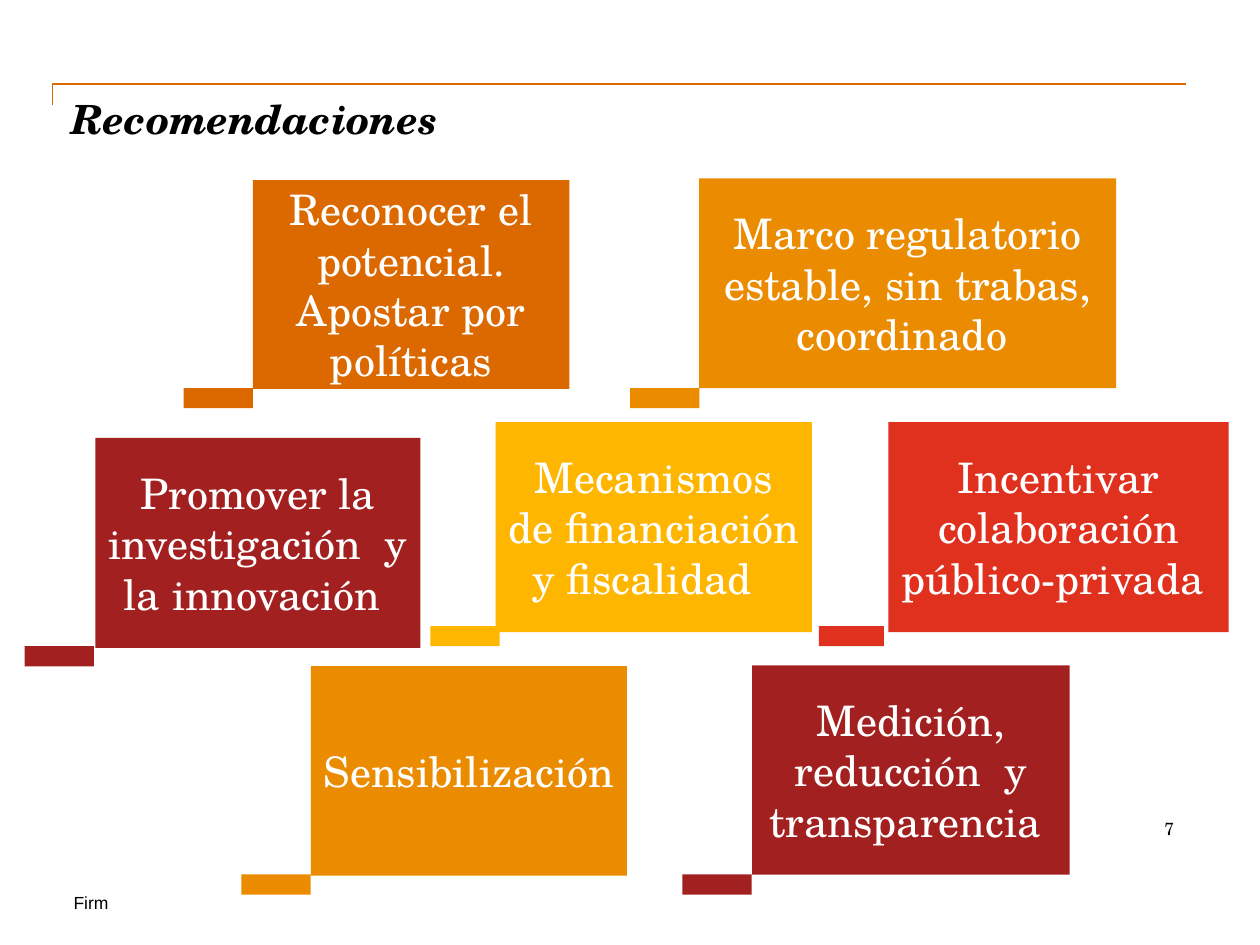
from lxml.etree import SubElement
from pptx import Presentation
from pptx.dml.color import RGBColor
from pptx.enum.shapes import MSO_CONNECTOR, MSO_SHAPE
from pptx.enum.text import MSO_ANCHOR, PP_ALIGN
from pptx.oxml.ns import qn
from pptx.util import Pt

SERIF, SANS = "TeX Gyre Schola", "Arial"
BLACK = RGBColor(0x00, 0x00, 0x00)
WHITE = RGBColor(0xFF, 0xFF, 0xFF)
RUST = RGBColor(0xDC, 0x69, 0x00)
AMBER = RGBColor(0xEB, 0x8C, 0x00)
GOLD = RGBColor(0xFF, 0xB6, 0x00)
RED = RGBColor(0xE0, 0x30, 0x1E)
WINE = RGBColor(0xA3, 0x20, 0x20)

TAB_W, TAB_H = 39.6, 11.5

# Card: text, colour, (left, top, width, height), (tab left, tab top, tab width)
CARDS = [
    ("Promover la investigación  y la innovación ", WINE,
     (54.5, 250.2, 185.7, 120), (14.1, 369.3, TAB_W)),
    ("Medición, reducción  y transparencia ", WINE,
     (429.8, 380.3, 181.4, 119.5), (390, 499.7, TAB_W)),
    ("Marco regulatorio estable, sin trabas, coordinado ", AMBER,
     (399.5, 102, 238.3, 119.8), (360, 221.8, TAB_W)),
    ("Sensibilización ", AMBER,
     (177.7, 380.6, 180.6, 119.8), (138, 499.7, TAB_W)),
    ("Reconocer el potencial. Apostar por políticas", RUST,
     (144.6, 102.9, 180.8, 119.3), (104.9, 221.8, TAB_W)),
    ("Mecanismos de financiación y fiscalidad  ", GOLD,
     (283.2, 241.2, 180.8, 120), (246, 357.8, TAB_W)),
    ("Incentivar colaboración público-privada ", RED,
     (507.7, 241.2, 194.4, 120), (468, 357.8, 37.2)),
]


def place(shape, box):
    for side, size in zip(("left", "top", "width", "height"), box):
        setattr(shape, side, Pt(size))


def write(shape, text, size, color, font=SERIF, align=PP_ALIGN.LEFT, **style):
    para = shape.text_frame.paragraphs[0]
    para.alignment = align
    run = para.add_run()
    run.text = text
    for key, value in {"size": Pt(size), "name": font, **style}.items():
        setattr(run.font, key, value)
    run.font.color.rgb = color


def trim(shape):
    frame = shape.text_frame
    look = {"word_wrap": True, "vertical_anchor": MSO_ANCHOR.TOP,
            "margin_left": 0, "margin_top": 0,
            "margin_right": 0, "margin_bottom": 0}
    for key, value in look.items():
        setattr(frame, key, value)


def block(slide, color, box):
    shape = slide.shapes.add_shape(MSO_SHAPE.RECTANGLE, *map(Pt, box))
    shape.shadow.inherit = False
    shape.fill.solid()
    shape.fill.fore_color.rgb = color
    shape.line.fill.background()
    return shape


def card(slide, text, color, box):
    shape = block(slide, color, box)
    shape.text_frame.word_wrap = True
    shape.text_frame.vertical_anchor = MSO_ANCHOR.MIDDLE
    write(shape, text, 24, WHITE, align=PP_ALIGN.CENTER)


def label(slide, text, box, **style):
    shape = slide.shapes.add_textbox(*map(Pt, box))
    trim(shape)
    write(shape, text, 10, BLACK, **style)


def rule(slide):
    # One-bend connector, turned a quarter so its long arm lies flat
    line = slide.shapes.add_connector(
        MSO_CONNECTOR.ELBOW, Pt(360), Pt(378), Pt(348), Pt(-270))
    line.line.color.rgb = RUST
    line.line.width = Pt(1)
    props = line._element.spPr
    props.find(qn("a:xfrm")).set("rot", "5400000")
    props.find(qn("a:prstGeom")).set("prst", "bentConnector2")
    SubElement(props, qn("a:effectLst"))


def head(slide, text):
    title = slide.shapes.title
    place(title, (41, 54, 678, 40.3))
    trim(title)
    write(title, text, 23, BLACK, bold=True, italic=True)


def main():
    deck = Presentation()
    deck.slide_width, deck.slide_height = Pt(720), Pt(540)
    slide = deck.slides.add_slide(deck.slide_layouts[5])

    # Frame: footer, top rule, page number and title
    label(slide, "Firm", (42, 510, 204, 12), font=SANS)
    rule(slide)
    label(slide, "7", (550.8, 467.3, 120, 12), align=PP_ALIGN.RIGHT)
    head(slide, "Recomendaciones")

    # Cards first, then the small tabs over their corners
    for text, color, box, _ in CARDS:
        card(slide, text, color, box)
    for _, color, _, tab in CARDS:
        block(slide, color, (*tab, TAB_H))

    deck.save("out.pptx")


if __name__ == "__main__":
    main()
